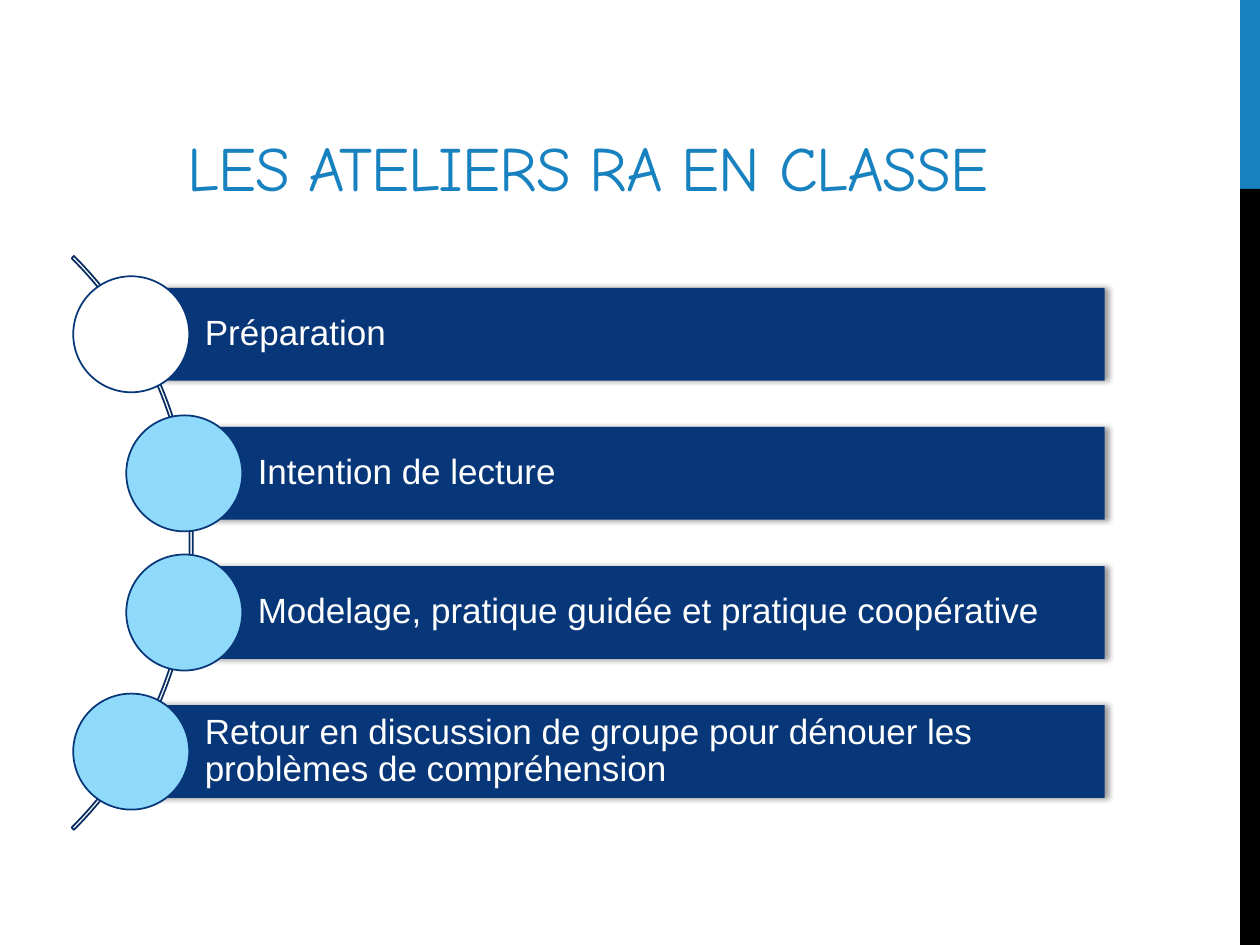
from dataclasses import dataclass

from lxml import etree
from pptx import Presentation
from pptx.dml.color import RGBColor
from pptx.enum.shapes import MSO_SHAPE
from pptx.enum.text import MSO_ANCHOR, PP_ALIGN
from pptx.oxml.ns import qn
from pptx.util import Pt

RECT, OVAL, ARC = MSO_SHAPE.RECTANGLE, MSO_SHAPE.OVAL, MSO_SHAPE.BLOCK_ARC
LEFT, CENTER = PP_ALIGN.LEFT, PP_ALIGN.CENTER
MIDDLE, BOTTOM = MSO_ANCHOR.MIDDLE, MSO_ANCHOR.BOTTOM


@dataclass(frozen=True)
class Theme:
    blue: str = "1782BF"
    navy: str = "073779"
    edge: str = "062C61"
    sky: str = "8FD9FB"
    white: str = "FFFFFF"
    black: str = "000000"
    head_font: str = "Comic Neue"
    body_font: str = "Arial"
    head_size: int = 36
    body_size: int = 20


def apply(target, values):
    for name, value in values.items():
        setattr(target, name, value)


class Deck:
    def __init__(self, theme, width, height):
        self.theme = theme
        self.file = Presentation()
        apply(self.file, {"slide_width": Pt(width), "slide_height": Pt(height)})
        self.slide = self.file.slides.add_slide(self.file.slide_layouts[6])

    def shape(self, kind, box, fill=None, line=None):
        item = self.slide.shapes.add_shape(kind, *map(Pt, box))
        item.shadow.inherit = False
        if fill:
            item.fill.solid()
            item.fill.fore_color.rgb = RGBColor.from_string(fill)
        else:
            item.fill.background()
        if line:
            item.line.color.rgb = RGBColor.from_string(line)
            item.line.width = Pt(1)
        else:
            item.line.fill.background()
        return item

    def shade(self, item):
        effects = item._element.spPr.find(qn("a:effectLst"))
        shadow = etree.SubElement(effects, qn("a:outerShdw"), blurRad=str(Pt(3.1)),
                                  dist=str(Pt(1.8)), dir="0", rotWithShape="0")
        color = etree.SubElement(shadow, qn("a:srgbClr"), val=self.theme.black)
        etree.SubElement(color, qn("a:alpha"), val="40000")

    def label(self, item, text, frame, para, font, color):
        body = item.text_frame
        apply(body, {"word_wrap": True, **frame})
        first = body.paragraphs[0]
        apply(first, para)
        run = first.add_run()
        run.text = text
        apply(run.font, font)
        run.font.color.rgb = RGBColor.from_string(color)
        return run

    def title(self, text, box):
        look = self.theme
        item = self.slide.shapes.add_textbox(*map(Pt, box))
        run = self.label(item, text, {"vertical_anchor": BOTTOM}, {"alignment": CENTER},
                         {"name": look.head_font, "size": Pt(look.head_size)}, look.blue)
        run._r.get_or_add_rPr().set("spc", "-60")

    def arc(self, box, start, end, band):
        item = self.shape(ARC, box, line=self.theme.edge)
        for index, value in enumerate((start, end, band)):
            item.adjustments[index] = value

    def bar(self, text, box):
        look = self.theme
        item = self.shape(RECT, box, look.navy)
        self.shade(item)
        frame = {"vertical_anchor": MIDDLE, "margin_left": Pt(42), "margin_right": Pt(4),
                 "margin_top": Pt(4), "margin_bottom": Pt(4)}
        self.label(item, text, frame, {"alignment": LEFT, "line_spacing": 0.9},
                   {"name": look.body_font, "size": Pt(look.body_size)}, look.white)

    def dot(self, x, y, size, fill):
        box = (x - size / 2, y - size / 2, size, size)
        self.shape(OVAL, box, fill, self.theme.navy)


def main():
    theme = Theme()
    deck = Deck(theme, 720, 540)

    # Side band
    deck.shape(RECT, (708.6, 0, 11.4, 108), theme.blue)
    deck.shape(RECT, (708.6, 108, 11.4, 432), theme.black)

    # Title
    deck.title("LES ATELIERS RA EN CLASSE", (36, 12.2, 600, 108))

    # Curve behind the steps
    deck.arc((-353.5, 78.4, 463.7, 463.7), 189, 27, 0.004)

    # Steps: each bar starts at the centre of its dot
    outer, inner, right = 75, 105.3, 631.3
    top, pitch, height, size = 164.5, 79.5, 53, 66.3
    steps = [
        ("Préparation", outer, theme.white),
        ("Intention de lecture", inner, theme.sky),
        ("Modelage, pratique guidée et pratique coopérative", inner, theme.sky),
        ("Retour en discussion de groupe pour dénouer les problèmes de compréhension",
         outer, theme.sky),
    ]
    for row, (text, left, fill) in enumerate(steps):
        y = top + row * pitch
        deck.bar(text, (left, y, right - left, height))
        deck.dot(left, y + height / 2, size, fill)

    deck.file.save("out.pptx")


if __name__ == "__main__":
    main()
